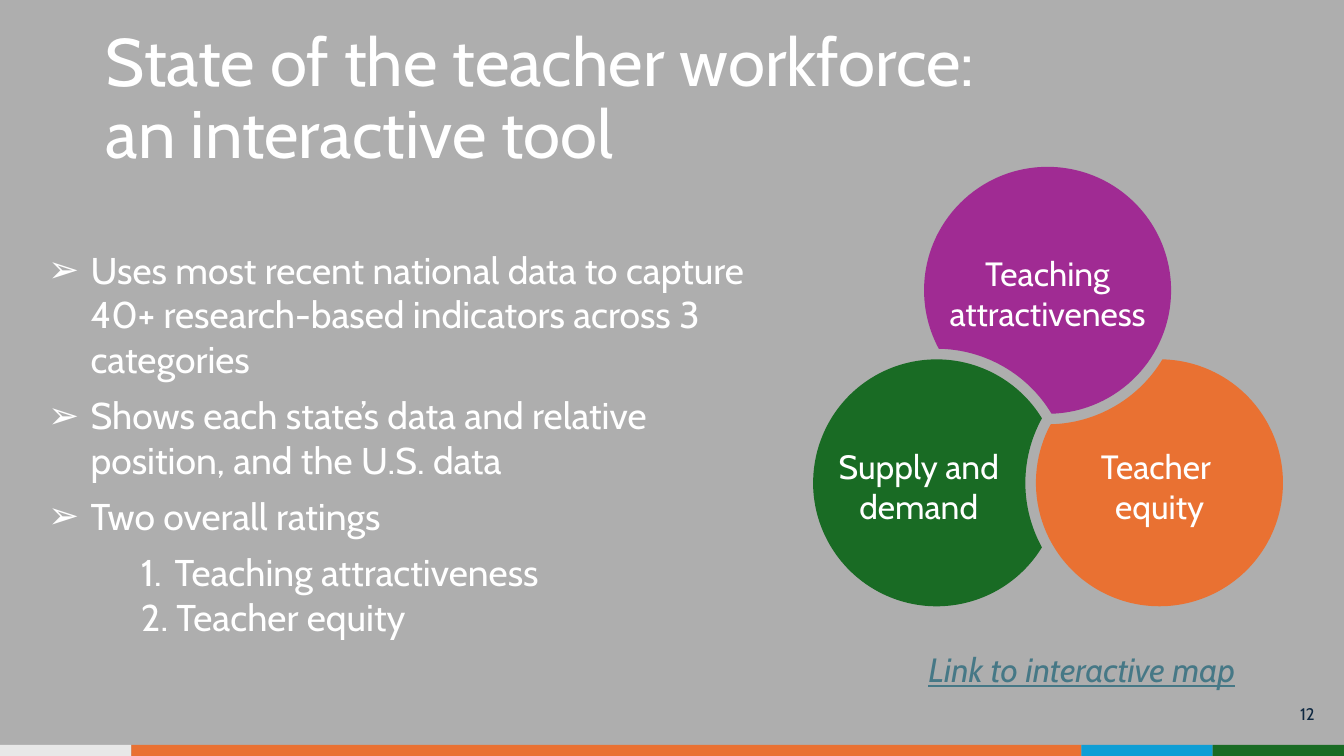
"""Slide on an interactive tool about the state of the teacher workforce."""
from itertools import pairwise
from math import acos, atan2, cos, hypot, pi, radians, sin, tan

from lxml import etree
from pptx import Presentation
from pptx.dml.color import RGBColor
from pptx.enum.shapes import MSO_SHAPE
from pptx.enum.text import MSO_ANCHOR, PP_ALIGN
from pptx.oxml.ns import qn
from pptx.util import Inches, Pt

RECTANGLE = MSO_SHAPE.RECTANGLE
TOP, MIDDLE, BOTTOM = MSO_ANCHOR.TOP, MSO_ANCHOR.MIDDLE, MSO_ANCHOR.BOTTOM
LEFT, CENTER, RIGHT = PP_ALIGN.LEFT, PP_ALIGN.CENTER, PP_ALIGN.RIGHT
FONT = "Cabin"
COLORS = {
    "background": "AEAEAE", "white": "FFFFFF", "navy": "0E2841", "link": "467886",
    "light": "E8E8E8", "orange": "E97132", "blue": "0F9ED5", "green": "196B24",
    "purple": "A02B93",
}
WIDTH, HEIGHT = 13.33, 7.5


def color(name):
    return RGBColor.from_string(COLORS[name])


def write(shape, lines, size, ink="white", align=LEFT, anchor=TOP, inset=None):
    frame = shape.text_frame
    frame.word_wrap = True
    frame.vertical_anchor = anchor
    if inset:
        frame.margin_left = frame.margin_right = Inches(inset)
        frame.margin_top = frame.margin_bottom = Inches(inset)
    frame.text = "\n".join(lines)
    for paragraph in frame.paragraphs:
        paragraph.alignment = align
        paragraph.font.name = FONT
        paragraph.font.size = Pt(size)
        paragraph.font.color.rgb = color(ink)
    return frame.paragraphs


deck = Presentation()
deck.slide_width, deck.slide_height = Inches(WIDTH), Inches(HEIGHT)
slide = deck.slides.add_slide(deck.slide_layouts[6])
slide.background.fill.solid()
slide.background.fill.fore_color.rgb = color("background")
shapes = slide.shapes

footer_height = 0.11
narrow = WIDTH * 0.0977
footer_left = 0
for name, width in [("light", narrow), ("orange", WIDTH - 3 * narrow),
                    ("blue", narrow), ("green", narrow)]:
    band = shapes.add_shape(RECTANGLE, Inches(footer_left), Inches(HEIGHT - footer_height),
                            Inches(width), Inches(footer_height))
    band.shadow.inherit = False
    band.fill.solid()
    band.fill.fore_color.rgb = color(name)
    band.line.fill.background()
    footer_left += width

page_number = shapes.add_textbox(Inches(12.37), Inches(6.85), Inches(0.8), Inches(0.46))
write(page_number, ["12"], 12, "navy", RIGHT, MIDDLE, 0.13)

title = shapes.add_textbox(Inches(0.92), Inches(0.4), Inches(11.5), Inches(1.45))
heading = write(title, ["State of the teacher workforce: \van interactive tool"], 48,
                anchor=BOTTOM, inset=0.13)[0]
heading.line_spacing = 0.9

map_link = shapes.add_textbox(Inches(9.11), Inches(6.39), Inches(4.2), Inches(0.5))
link_text = write(map_link, ["Link to interactive map"], 24, "link")[0]
link_text.font.italic = link_text.font.underline = True

points = [
    "Uses most recent national data to capture 40+ research-based indicators across 3 categories",
    "Shows each state’s data and relative position, and the U.S. data",
    "Two overall ratings",
]
ratings = [" Teaching attractiveness", " Teacher equity"]
body = shapes.add_textbox(Inches(0.38), Inches(2.4), Inches(7.42), Inches(4.03))
for index, paragraph in enumerate(write(body, points + ratings, 26.67)):
    if index < len(points):
        margin, hanging = 0.42, 0.42
        paragraph.space_after = Pt(8)
        markers = [("a:buFont", "typeface", FONT), ("a:buChar", "char", "➢")]
    else:
        margin, hanging = 1.17, 0.25
        paragraph.level = 3
        markers = [("a:buAutoNum", "type", "arabicPeriod")]
    properties = paragraph._p.get_or_add_pPr()
    properties.set("marL", str(Inches(margin)))
    properties.set("indent", str(-Inches(hanging)))
    for tag, key, value in markers:
        marker = etree.Element(qn(tag))
        marker.set(key, value)
        properties.insert_element_before(marker, "a:tabLst", "a:defRPr", "a:extLst")

RADIUS, CUT_RADIUS = 1.225, 1.33
categories = [
    (["Teacher ", "equity"], "orange", (11.5, 4.79), [-60, -15, 30, 90, 120, 165]),
    (["Teaching attractiveness"], "purple", (10.39, 2.88), [180, 270, 315, 360]),
    (["Supply and demand"], "green", (9.29, 4.79), [60, 90, 150, 240, 270]),
]
for index, (label, fill, center, joints) in enumerate(categories):
    neighbor = categories[(index + 1) % 3][2]
    dx, dy = neighbor[0] - center[0], neighbor[1] - center[1]
    distance, bearing = hypot(dx, dy), atan2(dy, dx)
    outer = acos((RADIUS**2 + distance**2 - CUT_RADIUS**2) / (2 * RADIUS * distance))
    inner = acos((CUT_RADIUS**2 + distance**2 - RADIUS**2) / (2 * CUT_RADIUS * distance))
    rim = [bearing + outer, *map(radians, joints), bearing + 2 * pi - outer]
    cut = [bearing + pi + inner, bearing + pi - inner]
    outline = [(center[0] + RADIUS * cos(rim[0]), center[1] + RADIUS * sin(rim[0]))]
    for (x, y), radius, angles in [(center, RADIUS, rim), (neighbor, CUT_RADIUS, cut)]:
        for start, end in pairwise(angles):
            handle = 4 / 3 * tan((end - start) / 4)
            for angle, pull in [(start, handle), (end, -handle), (end, 0)]:
                outline.append((x + radius * (cos(angle) - pull * sin(angle)),
                                y + radius * (sin(angle) + pull * cos(angle))))
    outline = [(Inches(x), Inches(y)) for x, y in outline]
    builder = shapes.build_freeform(*outline[0])
    builder.add_line_segments(outline[1:], close=True)
    circle = builder.convert_to_shape()
    contour = circle._element.find(".//" + qn("a:path"))
    segments = contour.findall(qn("a:lnTo"))
    for first in range(0, len(outline) - 1, 3):
        curve = etree.Element(qn("a:cubicBezTo"))
        segments[first].addprevious(curve)
        for segment in segments[first:first + 3]:
            curve.append(segment[0])
            contour.remove(segment)
    circle.shadow.inherit = False
    circle.fill.solid()
    circle.fill.fore_color.rgb = color(fill)
    circle.line.fill.background()
    write(circle, label, 24, align=CENTER, anchor=MIDDLE)
    circle.text_frame.margin_top = Inches(0.11)

deck.save("out.pptx")
